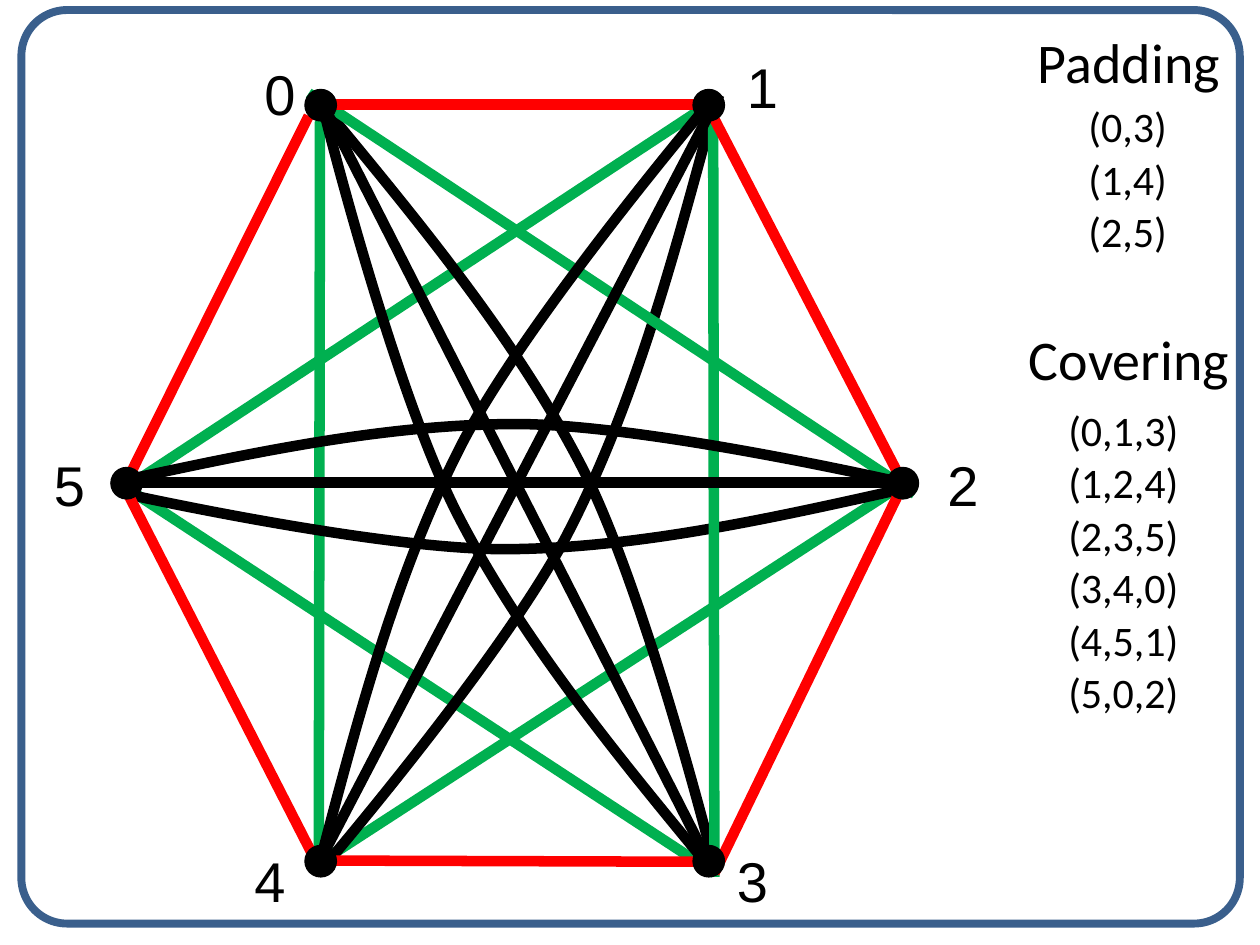
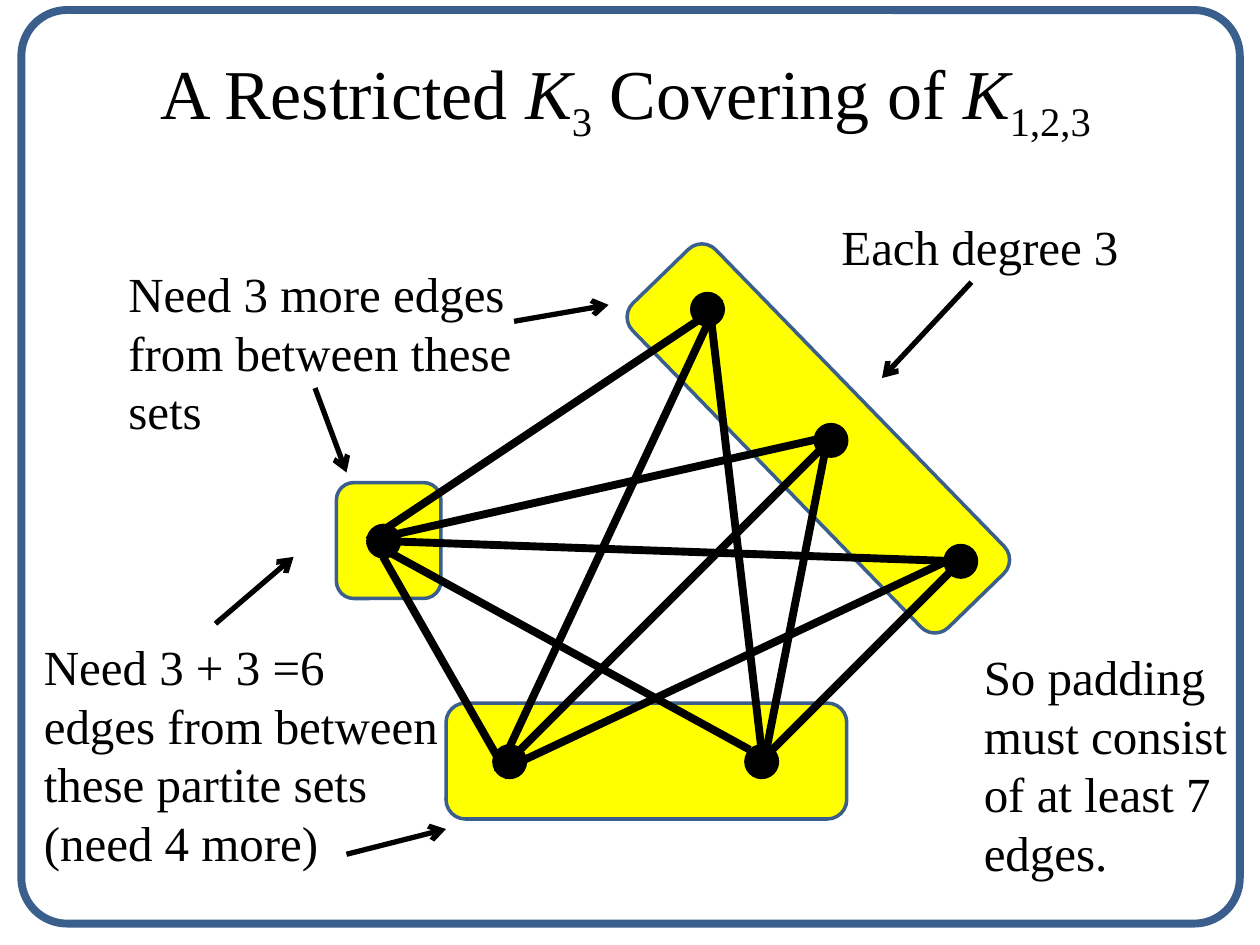
from lxml import etree
from pptx import Presentation
from pptx.dml.color import RGBColor
from pptx.enum.shapes import MSO_CONNECTOR, MSO_SHAPE
from pptx.enum.text import MSO_ANCHOR, MSO_AUTO_SIZE, PP_ALIGN
from pptx.oxml.ns import qn
from pptx.util import Inches, Pt

STRAIGHT = MSO_CONNECTOR.STRAIGHT
ELLIPSE, ROUNDED = MSO_SHAPE.OVAL, MSO_SHAPE.ROUNDED_RECTANGLE
LEFT, CENTER = PP_ALIGN.LEFT, PP_ALIGN.CENTER
TOP, GROW = MSO_ANCHOR.TOP, MSO_AUTO_SIZE.SHAPE_TO_FIT_TEXT

BLACK = RGBColor(0x00, 0x00, 0x00)
RED = RGBColor(0xFF, 0x00, 0x00)
GREEN = RGBColor(0x00, 0xB0, 0x50)
YELLOW = RGBColor(0xFF, 0xFF, 0x00)
BLUE = RGBColor(0x3A, 0x5F, 0x8C)
SANS, LABEL_FONT, SERIF = "Calibri", "Arial", "Times New Roman"
NODE_SIZE = 0.25
EDGE_WIDTH = 6

# Slide 1: the six vertices of the hexagon, as (label, node corner, label corner)
HEXAGON_NODES = [
    ("0", (2.42, 0.71), (2, 0.42)),
    ("1", (5.5, 0.71), (5.83, 0.37)),
    ("2", (7.04, 3.71), (7.42, 3.53)),
    ("5", (0.88, 3.71), (0.33, 3.53)),
    ("3", (5.5, 6.71), (5.75, 6.67)),
    ("4", (2.42, 6.71), (1.92, 6.67)),
]
# Edges are (x1, y1, x2, y2)
LOWER_GREEN = [(1, 3.87, 5.59, 0.85), (2.53, 6.85, 2.54, 0.96),
               (5.67, 6.93, 1, 3.87), (7.17, 3.84, 2.53, 6.85)]
UPPER_GREEN = [(5.66, 0.83, 5.67, 6.96), (2.45, 0.74, 7.26, 3.92)]
RED_SIDES = [(1, 3.83, 2.45, 0.92), (2.55, 6.92, 1, 3.89),
             (5.67, 6.84, 2.63, 6.83), (7.17, 3.84, 5.67, 6.93),
             (5.61, 0.83, 7.17, 3.84), (2.45, 0.83, 5.71, 0.83)]
DIAGONALS = [(2.58, 0.86, 5.67, 6.93), (5.71, 0.75, 2.53, 6.85),
             (7.17, 3.83, 0.91, 3.83)]

# One bowed edge from (0, 0) in a 1000 by 1000 square: two cubic curves,
# each (control, control, end); it is turned into (left, top, width, height, degrees)
BOW_GRID = 1000
BOW_CURVES = [((246, 153), (492, 306), (660, 474)),
              ((825, 640), (1000, 1000), (1000, 1000))]
LOWER_BOWS = [(2.71, 1.14, 2.75, 5.52, 116.1), (2.54, 0.93, 3.09, 6.01, 54.7),
              (2.58, 0.86, 3.09, 6.01, 0)]
UPPER_BOWS = [(2.58, 0.92, 3.09, 6.01, 180), (2.53, 0.84, 3.09, 6.01, 234.3),
              (2.64, 1.03, 2.79, 5.6, 296.5)]

# Columns: heading, heading top, left and width of entries, first top, entries
COLUMNS = [
    ("Padding", 0.17, 8.54, 0.96, 0.75, ["(0,3)", "(1,4)", "(2,5)"]),
    ("Covering", 2.53, 8.38, 1.21, 3.16,
     ["(0,1,3)", "(1,2,4)", "(2,3,5)", "(3,4,0)", "(4,5,1)", "(5,0,2)"]),
]
ENTRY_STEP = 1.25 / 3

# Slide 2: title runs as (text, style)
TITLE_BOX = (1.13, 0.34, 7.75, 0.77)
TITLE_RUNS = [("A Restricted ", ""), ("K", "italic"), ("3", "subscript"),
              (" Covering of ", ""), ("K", "italic"), ("1,2,3 ", "subscript")]
PARTITE_SETS = [(2.67, 3.83, 0.83, 0.92, 0), (4.7, 3.02, 3.59, 0.92, 45.8),
                (3.54, 5.58, 3.18, 0.92, 0)]
PARTITE_NODES = [(5.49, 2.33), (6.47, 3.37), (7.5, 4.33),
                 (5.92, 5.92), (3.92, 5.92), (2.92, 4.17)]
PARTITE_EDGES = [
    (2.92, 4.29, 5.53, 2.55), (2.92, 4.29, 6.47, 3.49), (2.92, 4.29, 7.75, 4.46),
    (5.95, 6.13, 7.71, 4.37), (6.04, 6.17, 6.59, 3.37), (6.04, 5.92, 5.62, 2.33),
    (5.71, 2.37, 3.95, 6.13), (3.95, 6.13, 6.5, 3.58), (3.95, 6.13, 7.5, 4.46),
    (4.04, 6.17, 3.04, 4.42), (5.95, 5.95, 2.92, 4.29),
]
NOTES = [
    ("Each degree 3", (6.58, 1.67, 2.83, 0.57)),
    ("Need 3 + 3 =6 edges from between these partite sets (need 4 more)",
     (0.25, 5, 3.33, 1.99)),
    ("Need 3 more edges from between these sets", (0.92, 2.04, 3.36, 1.51)),
    ("So padding must consist of at least 7 edges.", (7.71, 5.08, 2.37, 1.99)),
]
NOTE_ARROWS = [(7.71, 2.24, 7, 3), (1.71, 4.95, 2.33, 4.42), (2.75, 6.78, 3.54, 6.58),
               (4.08, 2.55, 4.83, 2.42), (2.5, 3.08, 2.75, 3.75)]


def set_line(line, color, width):
    line.color.rgb = color
    line.width = Pt(width)


def add_shape(slide, kind, box, fill, line_color, line_width, degrees=0):
    shape = slide.shapes.add_shape(kind, *map(Inches, box))
    shape.shadow.inherit = False
    if fill is None:
        shape.fill.background()
    else:
        shape.fill.solid()
        shape.fill.fore_color.rgb = fill
    set_line(shape.line, line_color, line_width)
    shape.rotation = degrees
    return shape


def add_node(slide, corner, line_width):
    add_shape(slide, ELLIPSE, (*corner, NODE_SIZE, NODE_SIZE), BLACK, BLACK, line_width)


def add_edges(slide, edges, color, width, arrow=False):
    for edge in edges:
        connector = slide.shapes.add_connector(STRAIGHT, *map(Inches, edge))
        set_line(connector.line, color, width)
        properties = connector._element.spPr
        if arrow:
            etree.SubElement(properties.find(qn("a:ln")), qn("a:tailEnd"), type="arrow")
        etree.SubElement(properties, qn("a:effectLst"))


def style_run(run, font, size):
    run.font.name = font
    run.font.size = Pt(size)
    run.font.color.rgb = BLACK


def add_text(slide, text, box, font, size, align=LEFT):
    frame = slide.shapes.add_textbox(*map(Inches, box)).text_frame
    frame.word_wrap = True
    frame.auto_size = GROW
    frame.text = text
    paragraph = frame.paragraphs[0]
    paragraph.alignment = align
    style_run(paragraph.runs[0], font, size)
    return paragraph


def add_frame(slide):
    frame = add_shape(slide, ROUNDED, (0.17, 0.08, 9.67, 7.25), None, BLUE, 4.5)
    frame.adjustments[0] = 0.05


def bend(shape):
    """Turn the straight segments of the outline into the curves of a bow."""
    outline = shape._element.find(".//" + qn("a:path"))
    for segment, curve in zip(outline.findall(qn("a:lnTo")), BOW_CURVES):
        cubic = etree.Element(qn("a:cubicBezTo"))
        for x, y in curve:
            etree.SubElement(cubic, qn("a:pt"), x=str(x), y=str(y))
        outline.replace(segment, cubic)


def add_bows(slide, bows):
    ends = [curve[-1] for curve in BOW_CURVES]
    for left, top, width, height, degrees in bows:
        scale = (Inches(width) / BOW_GRID, Inches(height) / BOW_GRID)
        builder = slide.shapes.build_freeform(0, 0, scale=scale)
        builder.add_line_segments(ends, close=False)
        bow = builder.convert_to_shape(Inches(left), Inches(top))
        bend(bow)
        bow.shadow.inherit = False
        bow.fill.background()
        set_line(bow.line, BLACK, EDGE_WIDTH)
        bow.rotation = degrees


def build_hexagon_slide(presentation):
    slide = presentation.slides.add_slide(presentation.slide_layouts[6])

    # Graph, from back to front
    add_edges(slide, LOWER_GREEN, GREEN, EDGE_WIDTH)
    add_bows(slide, LOWER_BOWS)
    add_edges(slide, UPPER_GREEN, GREEN, EDGE_WIDTH)
    add_edges(slide, RED_SIDES, RED, EDGE_WIDTH)
    for _, corner, _ in HEXAGON_NODES:
        add_node(slide, corner, 0.75)
    add_bows(slide, UPPER_BOWS)
    add_edges(slide, DIAGONALS, BLACK, EDGE_WIDTH)

    # Vertex labels, with half a line of space before
    for label, _, corner in HEXAGON_NODES:
        paragraph = add_text(slide, label, (*corner, 1, 0.63), LABEL_FONT, 32)
        spacing = etree.SubElement(paragraph._p.get_or_add_pPr(), qn("a:spcBef"))
        etree.SubElement(spacing, qn("a:spcPct"), val="50000")

    # Padding and covering columns
    for heading, heading_top, left, width, first_top, entries in COLUMNS:
        add_text(slide, heading, (7.5, heading_top, 2.92, 0.64), SANS, 32, CENTER)
        for index, entry in enumerate(entries):
            top = first_top + index * ENTRY_STEP
            add_text(slide, entry, (left, top, width, 0.5), SANS, 24)
    add_frame(slide)


def build_partite_slide(presentation):
    slide = presentation.slides.add_slide(presentation.slide_layouts[5])

    # Title
    title = slide.shapes.title
    title.left, title.top, title.width, title.height = map(Inches, TITLE_BOX)
    title.text_frame.vertical_anchor = TOP
    title.text_frame.auto_size = GROW
    paragraph = title.text_frame.paragraphs[0]
    paragraph.alignment = CENTER
    for text, style in TITLE_RUNS:
        run = paragraph.add_run()
        run.text = text
        style_run(run, SERIF, 40)
        run.font.italic = style == "italic"
        if style == "subscript":
            run.font._element.set("baseline", "-25000")

    # Partite sets, nodes and edges
    for *box, degrees in PARTITE_SETS:
        add_shape(slide, ROUNDED, box, YELLOW, BLUE, 2, degrees)
    for corner in PARTITE_NODES:
        add_node(slide, corner, 2)
    add_edges(slide, PARTITE_EDGES, BLACK, 4.5)

    # Remarks and their arrows
    for text, box in NOTES:
        add_text(slide, text, box, SERIF, 28)
    add_edges(slide, NOTE_ARROWS, BLACK, 3, arrow=True)
    add_frame(slide)


def main():
    presentation = Presentation()
    presentation.slide_width, presentation.slide_height = Inches(10), Inches(7.5)
    build_hexagon_slide(presentation)
    build_partite_slide(presentation)
    presentation.save("out.pptx")


if __name__ == "__main__":
    main()
